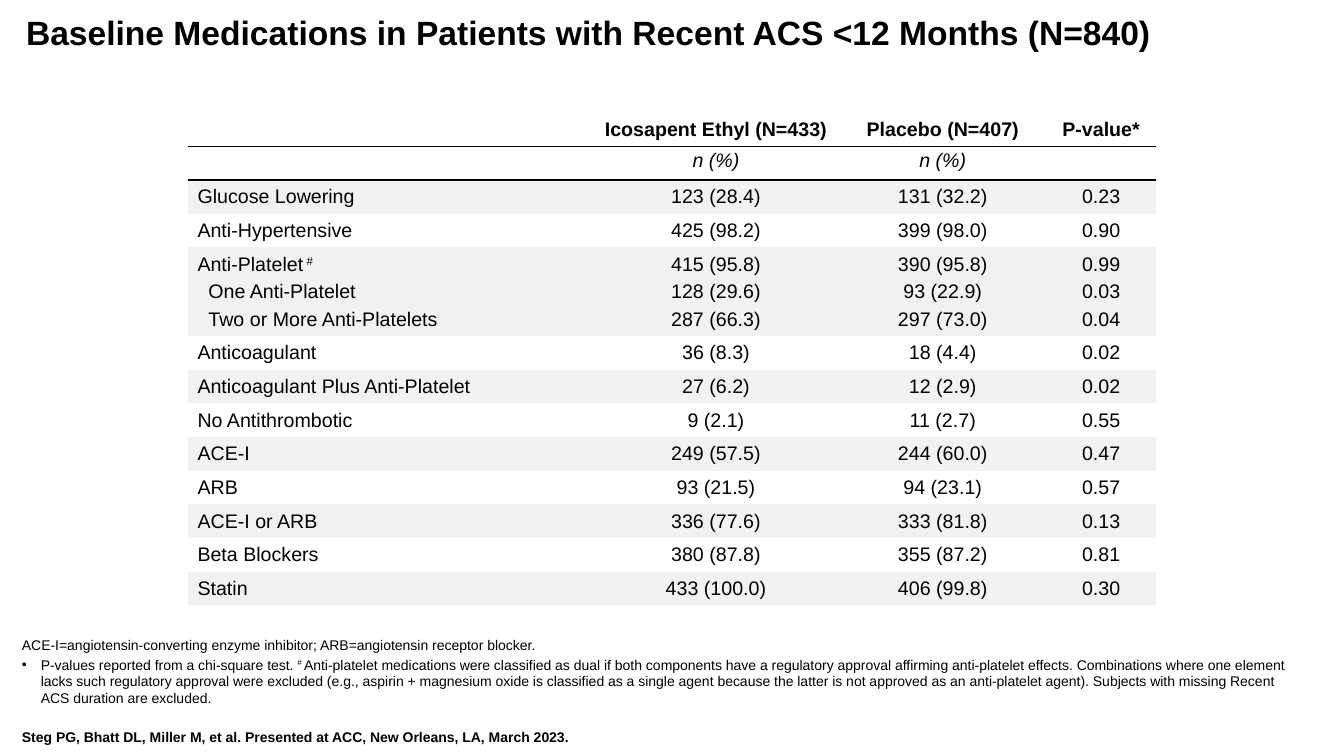
from lxml import etree
from pptx import Presentation
from pptx.dml.color import RGBColor
from pptx.enum.text import MSO_ANCHOR, PP_ALIGN
from pptx.oxml.ns import qn
from pptx.util import Pt

BLACK = RGBColor(0, 0, 0)
BAND = RGBColor(0xF2, 0xF2, 0xF2)
MIDDLE, TOP, BOTTOM = MSO_ANCHOR.MIDDLE, MSO_ANCHOR.TOP, MSO_ANCHOR.BOTTOM
CENTER, LEFT = PP_ALIGN.CENTER, PP_ALIGN.LEFT
NO_GRID_STYLE = "{2D5ABB26-0587-4C30-8999-92F81FD0307C}"

HEADER, UNITS = 0, 1
PLATELET, ONE_PLATELET, TWO_PLATELETS = 4, 5, 6
ROWS = [
    ("", "Icosapent Ethyl (N=433)", "Placebo (N=407)", "P-value*"),
    ("", "n (%)", "n (%)", ""),
    ("Glucose Lowering", "123 (28.4)", "131 (32.2)", "0.23"),
    ("Anti-Hypertensive", "425 (98.2)", "399 (98.0)", "0.90"),
    ("Anti-Platelet", "415 (95.8)", "390 (95.8)", "0.99"),
    ("One Anti-Platelet", "128 (29.6)", "93 (22.9)", "0.03"),
    ("Two or More Anti-Platelets", "287 (66.3)", "297 (73.0)", "0.04"),
    ("Anticoagulant", "36 (8.3)", "18 (4.4)", "0.02"),
    ("Anticoagulant Plus Anti-Platelet", "27 (6.2)", "12 (2.9)", "0.02"),
    ("No Antithrombotic", "9 (2.1)", "11 (2.7)", "0.55"),
    ("ACE-I", "249 (57.5)", "244 (60.0)", "0.47"),
    ("ARB", "93 (21.5)", "94 (23.1)", "0.57"),
    ("ACE-I or ARB", "336 (77.6)", "333 (81.8)", "0.13"),
    ("Beta Blockers", "380 (87.8)", "355 (87.2)", "0.81"),
    ("Statin", "433 (100.0)", "406 (99.8)", "0.30"),
]
SHADED = {2, 4, 5, 6, 8, 10, 12, 14}
COL_WIDTHS = [289, 175.7, 148.3, 78]
ROW_HEIGHTS = {PLATELET: 21.6, ONE_PLATELET: 19.8, TWO_PLATELETS: 21.6}
# Top and bottom cell margins where they differ from 3.6
CELL_MARGINS = {UNITS: (2.2, 4.3), PLATELET: (3.6, 1.4),
                ONE_PLATELET: (1.4, 1.4), TWO_PLATELETS: (1.4, 3.6)}


def add_run(p, text, size, bold=False, italic=False, raised=False):
    r = p.add_run()
    r.text = text
    r.font.name = "Arial"
    r.font.size = Pt(size)
    r.font.bold = bold
    r.font.italic = italic
    r.font.color.rgb = BLACK
    if raised:
        r.font._element.set("baseline", "30000")


def add_rule(cell, side):
    ln = etree.Element(qn(f"a:{side}"), w=str(Pt(1)))
    fill = etree.SubElement(ln, qn("a:solidFill"))
    etree.SubElement(fill, qn("a:srgbClr"), val=str(BLACK))
    cell._tc.get_or_add_tcPr().insert(0, ln)


prs = Presentation()
prs.slide_width, prs.slide_height = Pt(960), Pt(540)
s = prs.slides.add_slide(prs.slide_layouts[6])

# Title
tf = s.shapes.add_textbox(Pt(11.5), Pt(8.6), Pt(924), Pt(50.4)).text_frame
tf.word_wrap = True
p = tf.paragraphs[0]
p.line_spacing = 0.9
add_run(p, "Baseline Medications in Patients with Recent ACS <12 Months (N=840)",
        24, bold=True)

# Medication table
table = s.shapes.add_table(len(ROWS), len(COL_WIDTHS), Pt(134.6), Pt(80.6),
                           Pt(sum(COL_WIDTHS)), Pt(351)).table
table.first_row = table.horz_banding = False
table._tbl.tblPr.find(qn("a:tableStyleId")).text = NO_GRID_STYLE
for col, width in zip(table.columns, COL_WIDTHS):
    col.width = Pt(width)

for i, row in enumerate(ROWS):
    table.rows[i].height = Pt(ROW_HEIGHTS.get(i, 24))
    top, bottom = CELL_MARGINS.get(i, (3.6, 3.6))
    for j, text in enumerate(row):
        cell = table.cell(i, j)
        cell.vertical_anchor = TOP if i == UNITS else MIDDLE
        cell.margin_top, cell.margin_bottom = Pt(top), Pt(bottom)
        cell.margin_left = Pt(5 if j else 6.5)
        cell.margin_right = Pt(5)
        if i in (ONE_PLATELET, TWO_PLATELETS) and j == 0:
            cell.margin_left = Pt(14.3)
        p = cell.text_frame.paragraphs[0]
        p.alignment = CENTER if j else LEFT
        if text:
            add_run(p, text, 14, bold=i == HEADER, italic=i == UNITS)
        else:
            etree.SubElement(p._p, qn("a:endParaRPr"), sz="1400")
        if i == PLATELET and j == 0:
            add_run(p, " #", 14, raised=True)
        if i == HEADER:
            add_rule(cell, "lnB")
        elif i == UNITS:
            add_rule(cell, "lnT")
        if i in SHADED:
            cell.fill.solid()
            cell.fill.fore_color.rgb = BAND
        else:
            cell.fill.background()

# Footnotes
tf = s.shapes.add_textbox(Pt(8.6), Pt(450), Pt(926.6), Pt(85.7)).text_frame
tf.word_wrap = True
tf.vertical_anchor = BOTTOM
add_run(tf.paragraphs[0], "ACE-I=angiotensin-converting enzyme inhibitor; "
        "ARB=angiotensin receptor blocker.", 10)

p = tf.add_paragraph()
p.space_before = Pt(2)
pPr = p._p.get_or_add_pPr()
pPr.set("marL", str(Pt(13.5)))
pPr.set("indent", str(-Pt(13.5)))
etree.SubElement(pPr, qn("a:buFont"), typeface="Arial")
etree.SubElement(pPr, qn("a:buChar"), char="•")
add_run(p, "P-values reported from a chi-square test. ", 10)
add_run(p, "# ", 10, raised=True)
add_run(p, "Anti-platelet medications were classified as dual if both components "
        "have a regulatory approval affirming anti-platelet effects. Combinations "
        "where one element lacks such regulatory approval were excluded (e.g., "
        "aspirin + magnesium oxide is classified as a single agent because the "
        "latter is not approved as an anti-platelet agent). Subjects with missing "
        "Recent ACS duration are excluded.", 10)

# Citation
p = tf.add_paragraph()
p.space_before = Pt(15.5)
add_run(p, "Steg PG, Bhatt DL, Miller M, et al. Presented at ACC, New Orleans, LA, "
        "March 2023.", 10, bold=True)

prs.save("out.pptx")
